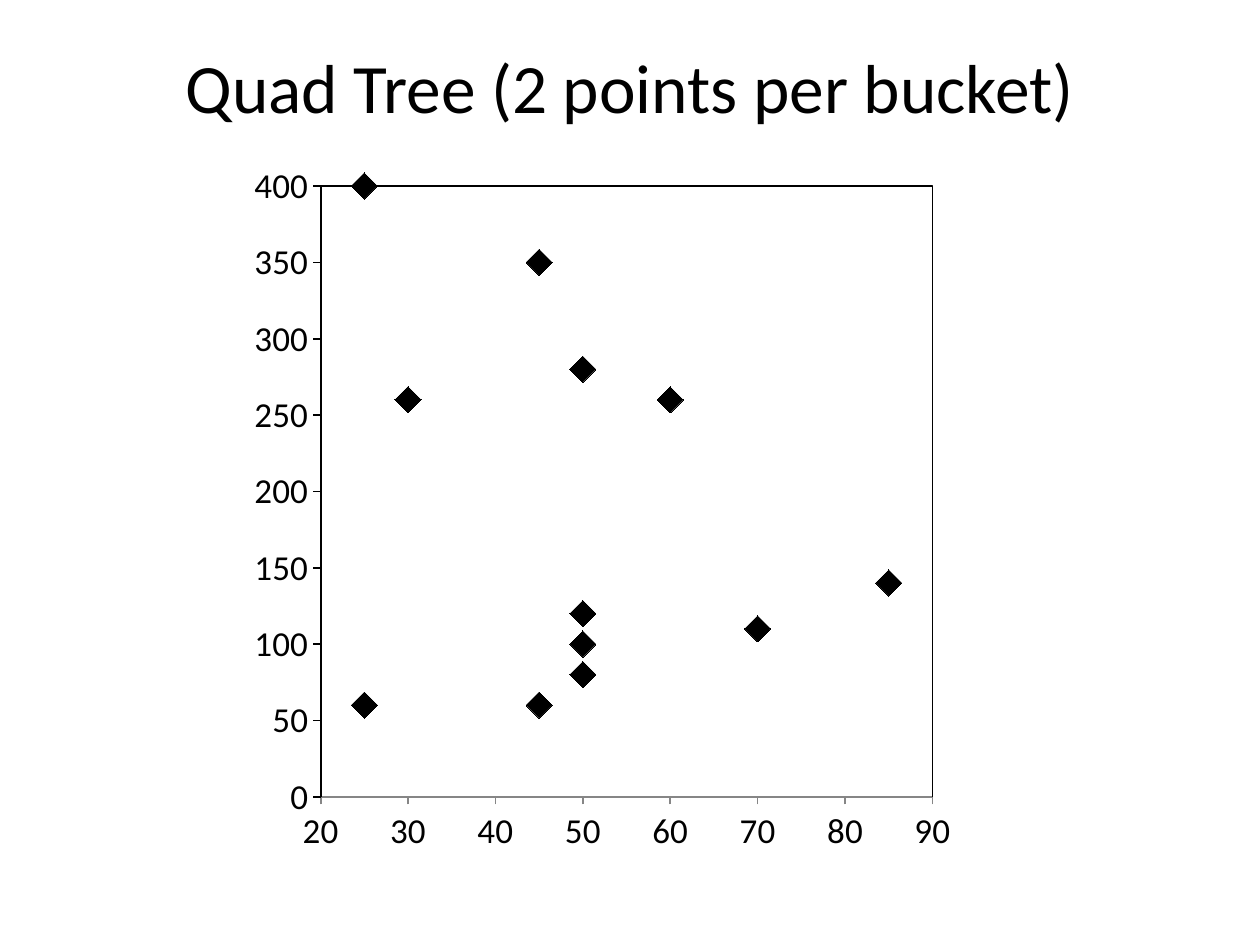
from lxml.etree import SubElement
from pptx import Presentation
from pptx.chart.data import XyChartData
from pptx.dml.color import RGBColor
from pptx.enum.chart import XL_CHART_TYPE, XL_MARKER_STYLE, XL_TICK_MARK
from pptx.enum.text import MSO_ANCHOR, PP_ALIGN
from pptx.oxml import parse_xml
from pptx.oxml.ns import nsdecls, qn
from pptx.util import Inches, Pt

TITLE = "Quad Tree (2 points per bucket)"
POINTS = [(25, 60), (45, 60), (50, 80), (50, 100), (50, 120), (70, 110),
          (85, 140), (30, 260), (25, 400), (45, 350), (50, 280), (60, 260)]
AXES = {
    "category_axis": {"minimum_scale": 20, "maximum_scale": 90, "major_unit": 10},
    "value_axis": {"minimum_scale": 0, "maximum_scale": 400, "major_unit": 50},
}
AXIS_COLORS = {"category_axis": "868686", "value_axis": "000000"}
AXIS_FORMAT = {"has_major_gridlines": False, "has_minor_gridlines": False,
               "major_tick_mark": XL_TICK_MARK.OUTSIDE,
               "minor_tick_mark": XL_TICK_MARK.NONE}
PLOT_SHARES = {"x": 0.134, "y": 0.054, "w": 0.808, "h": 0.852}
INK = "000000"
WIDTH, HEIGHT = Inches(10), Inches(7.5)


def color(hex_code):
    return RGBColor.from_string(hex_code)


def set_all(target, values):
    for name, value in values.items():
        setattr(target, name, value)


def set_font(font, size):
    set_all(font, {"name": "Calibri", "size": Pt(size)})
    font.color.rgb = color(INK)


def add_title(slide):
    box = slide.shapes.add_textbox(WIDTH * 0.05, HEIGHT * 0.04, WIDTH * 0.9, Inches(0.76))
    frame = box.text_frame
    set_all(frame, {"word_wrap": True, "vertical_anchor": MSO_ANCHOR.MIDDLE, "text": TITLE})
    paragraph = frame.paragraphs[0]
    paragraph.alignment = PP_ALIGN.CENTER
    set_font(paragraph.runs[0].font, 39.6)


def frame_plot(chart):
    """Fix the inner plot area by shares of the chart and outline it."""
    plot_area = chart.plots[0]._element.getparent()
    for old in plot_area.findall(qn("c:layout")):
        plot_area.remove(old)
    layout = parse_xml(f"<c:layout {nsdecls('c')}/>")
    plot_area.insert(0, layout)
    manual = SubElement(layout, qn("c:manualLayout"))
    settings = {"layoutTarget": "inner", "xMode": "edge", "yMode": "edge", **PLOT_SHARES}
    for tag, value in settings.items():
        SubElement(manual, qn(f"c:{tag}")).set("val", str(value))
    plot_area.append(parse_xml(
        f"<c:spPr {nsdecls('c', 'a')}><a:noFill/><a:ln w='{Pt(1)}'><a:solidFill>"
        f"<a:srgbClr val='{INK}'/></a:solidFill></a:ln></c:spPr>"))


def add_scatter(slide):
    data = XyChartData()
    points = data.add_series("Series 1")
    for x, y in POINTS:
        points.add_data_point(x, y)
    chart = slide.shapes.add_chart(
        XL_CHART_TYPE.XY_SCATTER, Inches(1.74), Inches(1.17),
        Inches(6.01), Inches(5.69), data).chart
    set_all(chart, {"has_legend": False, "has_title": False})
    set_font(chart.font, 20)
    chart.plots[0].vary_by_categories = False

    for name, scale in AXES.items():
        axis = getattr(chart, name)
        set_all(axis, {**AXIS_FORMAT, **scale})
        set_font(axis.tick_labels.font, 20)
        axis.format.line.color.rgb = color(AXIS_COLORS[name])
        axis.format.line.width = Pt(1)

    series = chart.plots[0].series[0]
    series.smooth = False
    series.format.line.fill.background()
    set_all(series.marker, {"style": XL_MARKER_STYLE.DIAMOND, "size": 15})
    series.marker.format.fill.solid()
    series.marker.format.fill.fore_color.rgb = color(INK)
    series.marker.format.line.color.rgb = color(INK)
    frame_plot(chart)


def main():
    deck = Presentation()
    set_all(deck, {"slide_width": WIDTH, "slide_height": HEIGHT})
    slide = deck.slides.add_slide(deck.slide_layouts[6])
    add_scatter(slide)
    add_title(slide)
    deck.save("out.pptx")


if __name__ == "__main__":
    main()
